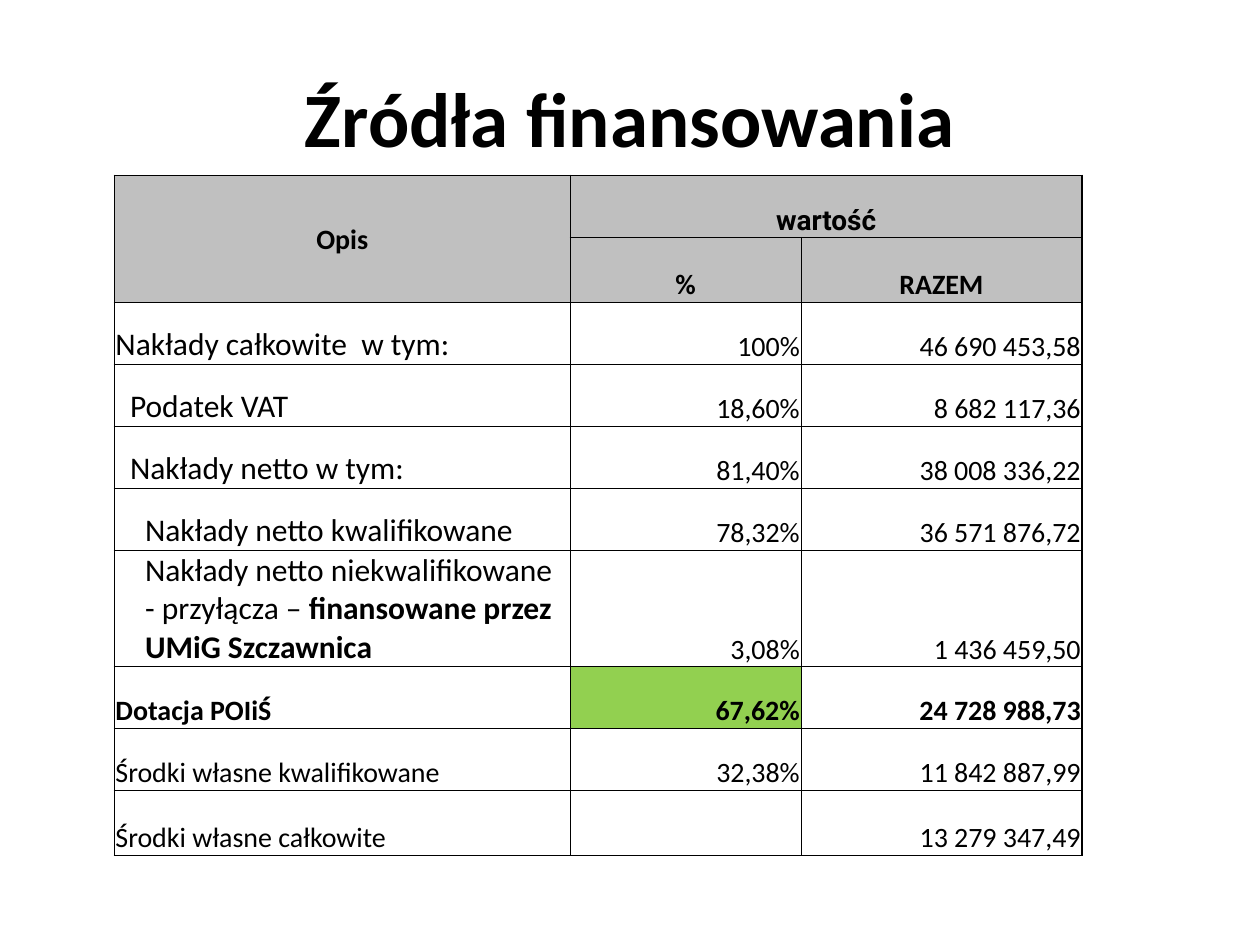
from dataclasses import dataclass

from lxml import etree
from pptx import Presentation
from pptx.dml.color import RGBColor
from pptx.enum.text import MSO_ANCHOR, PP_ALIGN
from pptx.oxml.ns import qn
from pptx.util import Pt

LEFT, CENTER, RIGHT = PP_ALIGN.LEFT, PP_ALIGN.CENTER, PP_ALIGN.RIGHT
MIDDLE, BOTTOM = MSO_ANCHOR.MIDDLE, MSO_ANCHOR.BOTTOM
TITLE_ONLY = 5


@dataclass(frozen=True)
class Theme:
    font: str = "Calibri"
    accent_font: str = "Roboto"
    ink: str = "000000"
    header: str = "C0C0C0"
    value_header: str = "BFBFBF"
    highlight: str = "92D050"
    title_size: float = 44
    cost_size: float = 18
    body_size: float = 16


THEME = Theme()

COLUMN_WIDTHS = [260.6, 131.8, 160.6]
ROW_HEIGHTS = [35.4, 37.2] + [35.4] * 4 + [66.4] + [35.4] * 2 + [37.2]
# Widths of the rules between columns and between rows, outer edges included
COLUMN_RULES = [1, 1, 0.5, 1]
ROW_RULES = [1, 0.5, 1] + [0.5] * 7 + [1]

INDENT = 8.6  # left margin of one level in the cost breakdown
# Description (plain, bold), indent level, share, amount
COSTS = [
    ("Nakłady całkowite  w tym:", "", 0, "100%", "46 690 453,58"),
    ("Podatek VAT", "", 1, "18,60%", "8 682 117,36"),
    ("Nakłady netto w tym:", "", 1, "81,40%", "38 008 336,22"),
    ("Nakłady netto kwalifikowane", "", 2, "78,32%", "36 571 876,72"),
    ("Nakłady netto niekwalifikowane - przyłącza – ",
     "finansowane przez UMiG Szczawnica", 2, "3,08%", "1 436 459,50"),
]
# Description, share, amount, bold
FUNDING = [
    ("Dotacja POIiŚ", "67,62%", "24 728 988,73", True),
    ("Środki własne kwalifikowane", "32,38%", "11 842 887,99", False),
    ("Środki własne całkowite", "", "13 279 347,49", False),
]


def color(hex_value):
    return RGBColor.from_string(hex_value)


def style_font(font, size, bold=None, name=THEME.font):
    font.name, font.size, font.bold = name, Pt(size), bold
    font.color.rgb = color(THEME.ink)


def add_title(slide, text):
    title = slide.shapes.title
    title.left, title.top, title.width, title.height = Pt(36), Pt(21.6), Pt(648), Pt(90)
    title.text_frame.text = text
    title.text_frame.vertical_anchor = MIDDLE
    heading = title.text_frame.paragraphs[0]
    heading.alignment = CENTER
    style_font(heading.font, THEME.title_size, True)


def add_rules(cell, row, column):
    """Draw the four borders from the rules that surround the cell's span."""
    last_row = row + cell.span_height
    last_column = column + cell.span_width
    edges = {
        "a:lnL": COLUMN_RULES[column],
        "a:lnR": COLUMN_RULES[last_column],
        "a:lnT": ROW_RULES[row],
        "a:lnB": ROW_RULES[last_row],
    }
    properties = cell._tc.get_or_add_tcPr()
    for position, (tag, width) in enumerate(edges.items()):
        line = etree.Element(qn(tag), w=str(Pt(width)))
        fill = etree.SubElement(line, qn("a:solidFill"))
        etree.SubElement(fill, qn("a:srgbClr"), val=THEME.ink)
        properties.insert(position, line)


def add_table(slide):
    frame = slide.shapes.add_table(
        len(ROW_HEIGHTS), len(COLUMN_WIDTHS), Pt(65.3), Pt(100.2),
        Pt(sum(COLUMN_WIDTHS)), Pt(sum(ROW_HEIGHTS)))
    table = frame.table
    table.first_row = table.horz_banding = False
    for column, width in zip(table.columns, COLUMN_WIDTHS):
        column.width = Pt(width)
    for row, height in zip(table.rows, ROW_HEIGHTS):
        row.height = Pt(height)
    # Header spans
    table.cell(0, 0).merge(table.cell(1, 0))
    table.cell(0, 1).merge(table.cell(0, 2))
    # Clear fills, tight margins and borders
    for row in range(len(ROW_HEIGHTS)):
        for column in range(len(COLUMN_WIDTHS)):
            cell = table.cell(row, column)
            cell.fill.background()
            cell.margin_left = cell.margin_right = cell.margin_top = Pt(0.7)
            cell.margin_bottom = 0
            cell.vertical_anchor = BOTTOM
            if not cell.is_spanned:
                if cell.is_merge_origin:
                    add_rules(cell, row, column)
                else:
                    add_single_rules(cell, row, column)
    return table


def add_single_rules(cell, row, column):
    """Borders of an unmerged cell, whose span is one by one."""
    add_rules(cell, row, column)


def write(cell, text, align, size=THEME.body_size, bold=False, name=THEME.font):
    paragraph = cell.text_frame.paragraphs[0]
    paragraph.alignment = align
    style_font(paragraph.font, size, bold, name)
    if text:
        run = paragraph.add_run()
        run.text = text
        style_font(run.font, size, bold, name)


def fill_cell(cell, hex_value):
    cell.fill.solid()
    cell.fill.fore_color.rgb = color(hex_value)


def write_header(table):
    headings = [
        (0, 0, "Opis", THEME.header, THEME.font),
        (0, 1, "wartość", THEME.value_header, THEME.accent_font),
        (1, 1, "%", THEME.header, THEME.font),
        (1, 2, "RAZEM", THEME.header, THEME.font),
    ]
    for row, column, text, fill, name in headings:
        cell = table.cell(row, column)
        write(cell, text, CENTER, bold=True, name=name)
        fill_cell(cell, fill)
    table.cell(0, 0).vertical_anchor = MIDDLE


def write_values(table, row, share, amount, bold=False):
    write(table.cell(row, 1), share, RIGHT, bold=bold)
    write(table.cell(row, 2), amount, RIGHT, bold=bold)


def write_costs(table, first_row):
    for row, (plain, strong, level, share, amount) in enumerate(COSTS, first_row):
        description = table.cell(row, 0)
        if level:
            description.margin_left = Pt(level * INDENT + 0.4)
        write(description, plain, LEFT, THEME.cost_size)
        if strong:
            write(description, strong, LEFT, THEME.cost_size, True)
        write_values(table, row, share, amount)


def write_funding(table, first_row):
    for row, (source, share, amount, bold) in enumerate(FUNDING, first_row):
        write(table.cell(row, 0), source, LEFT, bold=bold)
        write_values(table, row, share, amount, bold)
    fill_cell(table.cell(first_row, 1), THEME.highlight)


def main():
    deck = Presentation()
    deck.slide_width, deck.slide_height = Pt(720), Pt(540)
    slide = deck.slides.add_slide(deck.slide_layouts[TITLE_ONLY])
    add_title(slide, "Źródła finansowania")
    table = add_table(slide)
    write_header(table)
    write_costs(table, first_row=2)
    write_funding(table, first_row=2 + len(COSTS))
    deck.save("out.pptx")


if __name__ == "__main__":
    main()
